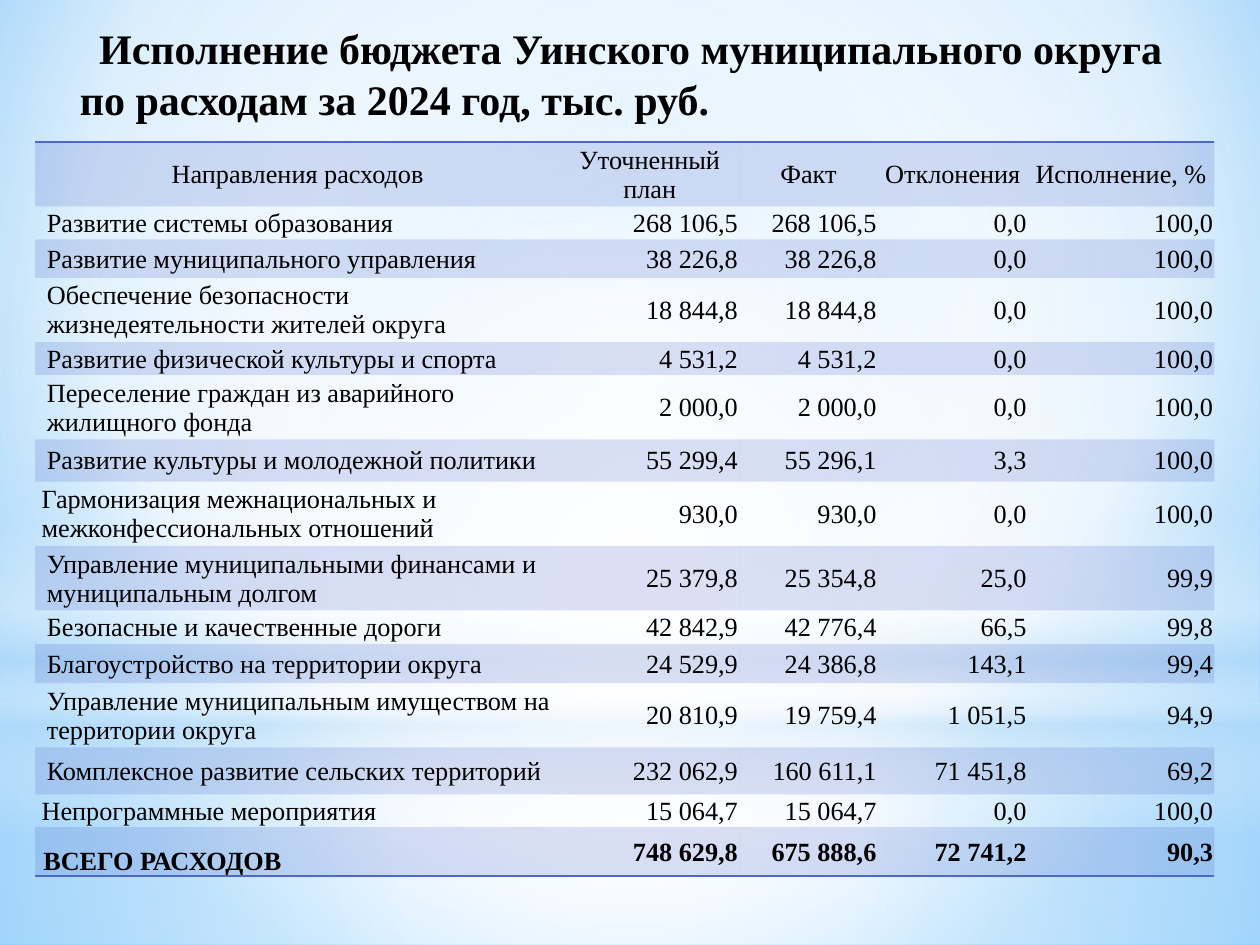
from dataclasses import dataclass
from typing import Any, NamedTuple

from lxml.etree import SubElement
from pptx import Presentation
from pptx.dml.color import RGBColor
from pptx.enum.shapes import MSO_SHAPE
from pptx.enum.text import MSO_ANCHOR, PP_ALIGN
from pptx.oxml.ns import qn
from pptx.util import Pt

COLORS = {
    "text": "000000",
    "accent": "4E67C8",
    "white": "FFFFFF",
    "haze": "B4DCFA",
    "sky": "9ED5FF",
    "deep_sky": "5BB9FF",
}
FONT = "Times New Roman"
NO_STYLE_NO_GRID = "{2D5ABB26-0587-4C30-8999-92F81FD0307C}"


class Stop(NamedTuple):
    position: int
    color: str
    opacity: int = 100


@dataclass
class Gradient:
    stops: list[Stop]
    focus: tuple[int, int, int, int] | None = (50, 50, 50, 50)
    angle: int = 90


@dataclass
class Glow:
    kind: MSO_SHAPE
    top: float
    height: float
    gradient: Gradient


@dataclass
class Expense:
    name: str
    plan: str
    fact: str
    deviation: str
    percent: str
    height: float
    indent: float = 6

    def texts(self) -> list[str]:
        return [self.name, self.plan, self.fact, self.deviation, self.percent]


BACKDROP = Gradient(
    [Stop(0, "sky"), Stop(69, "white"), Stop(100, "deep_sky")], (20, 10, 20, 60))
GLOWS = [
    Glow(MSO_SHAPE.RECTANGLE, 401.8, 138.2, Gradient(
        [Stop(0, "white", 91), Stop(37, "white", 76), Stop(100, "haze", 79)])),
    Glow(MSO_SHAPE.RECTANGLE, 0, 401.8, Gradient(
        [Stop(0, "white", 89), Stop(48, "white", 62), Stop(100, "haze", 79)])),
    Glow(MSO_SHAPE.RECTANGLE, 296.6, 180, Gradient(
        [Stop(0, "white", 0), Stop(29, "white", 30), Stop(45, "haze", 40),
         Stop(55, "white", 26), Stop(65, "haze", 60), Stop(100, "white", 0)], None)),
    Glow(MSO_SHAPE.OVAL, 126, 401.8, Gradient(
        [Stop(0, "white"), Stop(56, "white", 0)])),
]

TITLE = "Исполнение бюджета Уинского муниципального округа по расходам за 2024 год, тыс. руб."
COLUMN_WIDTHS = [300.2, 102.2, 79.2, 85.7, 106.6]
SHORT, TALL = 17.2, 36.7
ROWS = [
    Expense("Направления расходов", "Уточненный план", "Факт", "Отклонения",
            "Исполнение, %", TALL, 0),
    Expense("Развитие системы образования", "268 106,5", "268 106,5", "0,0", "100,0", SHORT),
    Expense("Развитие муниципального управления", "38 226,8", "38 226,8", "0,0", "100,0", 22),
    Expense("Обеспечение безопасности жизнедеятельности жителей округа",
            "18 844,8", "18 844,8", "0,0", "100,0", TALL),
    Expense("Развитие физической культуры и спорта", "4 531,2", "4 531,2", "0,0", "100,0", 18.5),
    Expense("Переселение граждан из аварийного жилищного фонда",
            "2 000,0", "2 000,0", "0,0", "100,0", TALL),
    Expense("Развитие культуры и молодежной политики",
            "55 299,4", "55 296,1", "3,3", "100,0", 24.2),
    Expense("Гармонизация межнациональных и межконфессиональных отношений",
            "930,0", "930,0", "0,0", "100,0", TALL, 3),
    Expense("Управление муниципальными финансами и муниципальным долгом",
            "25 379,8", "25 354,8", "25,0", "99,9", TALL),
    Expense("Безопасные и качественные дороги", "42 842,9", "42 776,4", "66,5", "99,8", 19.4),
    Expense("Благоустройство на территории округа",
            "24 529,9", "24 386,8", "143,1", "99,4", 22.2),
    Expense("Управление муниципальным имуществом на территории округа",
            "20 810,9", "19 759,4", "1 051,5", "94,9", TALL),
    Expense("Комплексное развитие сельских территорий",
            "232 062,9", "160 611,1", "71 451,8", "69,2", 26.8),
    Expense("Непрограммные мероприятия", "15 064,7", "15 064,7", "0,0", "100,0", SHORT, 3),
    Expense("ВСЕГО РАСХОДОВ", "748 629,8", "675 888,6", "72 741,2", "90,3", 28, 4),
]
CELL_FORMAT = {"margin_left": Pt(0.75), "margin_right": Pt(0.75),
               "margin_top": Pt(0.75), "margin_bottom": Pt(0),
               "vertical_anchor": MSO_ANCHOR.MIDDLE}
TITLE_FORMAT = {"word_wrap": True, "vertical_anchor": MSO_ANCHOR.TOP,
                "margin_left": Pt(9), "margin_right": Pt(7.2),
                "margin_top": Pt(3.6), "margin_bottom": Pt(3.6)}


def apply_format(target: Any, values: dict[str, Any]) -> None:
    for name, value in values.items():
        setattr(target, name, value)


def add_color(parent: Any, color: str, opacity: int = 100) -> None:
    node = SubElement(parent, qn("a:srgbClr"), val=COLORS[color])
    if opacity < 100:
        SubElement(node, qn("a:alpha"), val=str(opacity * 1000))


def set_gradient(fill: Any, holder: Any, gradient: Gradient) -> None:
    """Turn the fill of holder (shape or background properties) into a gradient."""
    fill.solid()
    node = holder.find(qn("a:solidFill"))
    node.clear()
    node.tag = qn("a:gradFill")
    node.set("rotWithShape", "1")
    stops = SubElement(node, qn("a:gsLst"))
    for stop in gradient.stops:
        add_color(SubElement(stops, qn("a:gs"), pos=str(stop.position * 1000)),
                  stop.color, stop.opacity)
    if gradient.focus is None:
        SubElement(node, qn("a:lin"), ang=str(gradient.angle * 60000), scaled="0")
    else:
        way = SubElement(node, qn("a:path"), path="circle")
        sides = {side: str(share * 1000) for side, share in zip("ltrb", gradient.focus)}
        SubElement(way, qn("a:fillToRect"), **sides)


def add_glow(page: Any, glow: Glow) -> None:
    shape = page.shapes.add_shape(glow.kind, Pt(0), Pt(glow.top), Pt(720), Pt(glow.height))
    shape.shadow.inherit = False
    shape.line.fill.background()
    set_gradient(shape.fill, shape.element.find(qn("p:spPr")), glow.gradient)


def write_text(paragraph: Any, text: str, size: float, bold: bool,
               align: PP_ALIGN, left: float = 0, first: float = 0) -> None:
    paragraph.alignment = align
    properties = paragraph._p.get_or_add_pPr()
    properties.set("marL", str(Pt(left)))
    properties.set("indent", str(Pt(first)))
    span = paragraph.add_run()
    span.text = text
    apply_format(span.font, {"name": FONT, "size": Pt(size), "bold": bold})
    span.font.color.rgb = RGBColor.from_string(COLORS["text"])


def add_border(cell: Any, side: str) -> None:
    properties = cell._tc.get_or_add_tcPr()
    line = SubElement(properties, qn(f"a:ln{side}"), w=str(Pt(1)))
    add_color(SubElement(line, qn("a:solidFill")), "accent")
    properties.insert(0, line)


def fill_cell(cell: Any, banded: bool) -> None:
    if not banded:
        cell.fill.background()
        return
    cell.fill.solid()
    cell.fill.fore_color.rgb = RGBColor.from_string(COLORS["accent"])
    color = cell._tc.tcPr.find(".//" + qn("a:srgbClr"))
    SubElement(color, qn("a:alpha"), val="20000")


def add_expense_table(page: Any) -> None:
    frame = page.shapes.add_table(
        len(ROWS), len(COLUMN_WIDTHS), Pt(20), Pt(81.2),
        Pt(sum(COLUMN_WIDTHS)), Pt(sum(row.height for row in ROWS)))
    table = frame.table
    apply_format(table, {"first_row": False, "horz_banding": False})
    frame.element.find(".//" + qn("a:tableStyleId")).text = NO_STYLE_NO_GRID
    for column, width in zip(table.columns, COLUMN_WIDTHS):
        column.width = Pt(width)
    last = len(ROWS) - 1
    for i, expense in enumerate(ROWS):
        table.rows[i].height = Pt(expense.height)
        for j, text in enumerate(expense.texts()):
            cell = table.cell(i, j)
            apply_format(cell, CELL_FORMAT)
            fill_cell(cell, i % 2 == 0)
            name_align = PP_ALIGN.LEFT if j == 0 else PP_ALIGN.RIGHT
            write_text(cell.text_frame.paragraphs[0], text, 15, i == last,
                       PP_ALIGN.CENTER if i == 0 else name_align,
                       expense.indent if j == 0 else 0)
            if i in (0, last):
                add_border(cell, "T" if i == 0 else "B")
    table.cell(last, 0).vertical_anchor = MSO_ANCHOR.BOTTOM


def main() -> None:
    deck = Presentation()
    apply_format(deck, {"slide_width": Pt(720), "slide_height": Pt(540)})
    page = deck.slides.add_slide(deck.slide_layouts[6])

    # Backdrop
    background = page.background.fill
    background.solid()
    set_gradient(background, page.element.find(".//" + qn("p:bgPr")), BACKDROP)
    for glow in GLOWS:
        add_glow(page, glow)

    # Title
    box = page.shapes.add_textbox(Pt(36.7), Pt(9.4), Pt(648), Pt(73.4))
    apply_format(box.text_frame, TITLE_FORMAT)
    write_text(box.text_frame.paragraphs[0], TITLE, 24, True, PP_ALIGN.LEFT, first=11)

    # Expense table
    add_expense_table(page)
    deck.save("out.pptx")


if __name__ == "__main__":
    main()
